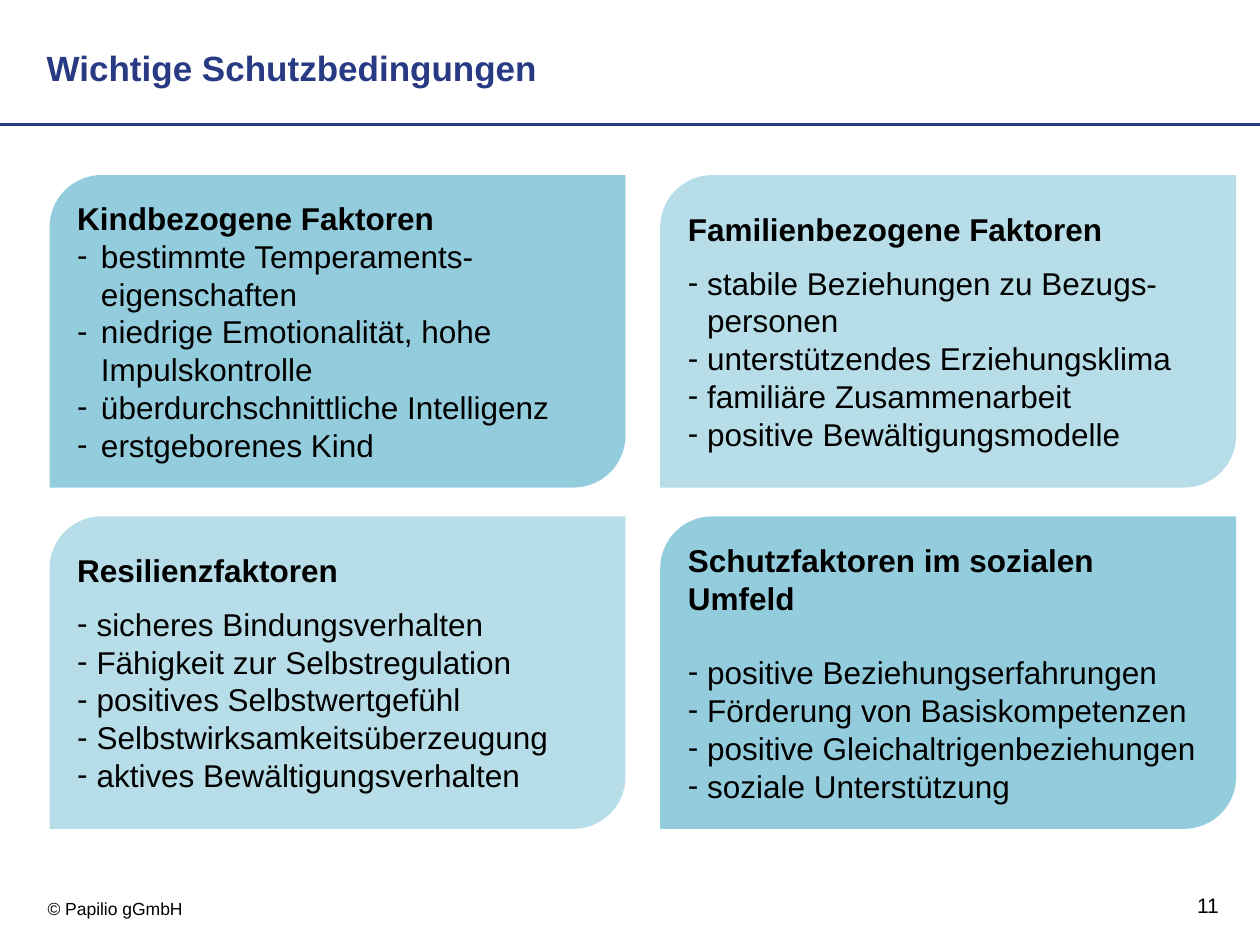
from lxml.etree import SubElement
from pptx import Presentation
from pptx.dml.color import RGBColor
from pptx.enum.shapes import MSO_CONNECTOR, MSO_SHAPE
from pptx.enum.text import MSO_ANCHOR, PP_ALIGN
from pptx.oxml.ns import qn
from pptx.util import Cm, Pt

NAVY = "283A84"
BLACK = "000000"
MID_BLUE = "93CDDD"
PALE_BLUE = "B7DEE8"

COLUMNS = (1.0, 13.31)
ROWS = (3.53, 10.41)
CARD_WIDTH, CARD_HEIGHT = 11.61, 6.3

FACTORS = [
    ("Kindbezogene Faktoren", 0, 0.48, [
        "bestimmte Temperaments-eigenschaften",
        "niedrige Emotionalität, hohe Impulskontrolle",
        "überdurchschnittliche Intelligenz",
        "erstgeborenes Kind",
    ]),
    ("Familienbezogene Faktoren", 9, 0.39, [
        "stabile Beziehungen zu Bezugs-personen",
        "unterstützendes Erziehungsklima",
        "familiäre Zusammenarbeit",
        "positive Bewältigungsmodelle",
    ]),
    ("Resilienzfaktoren", 9, 0.39, [
        "sicheres Bindungsverhalten",
        "Fähigkeit zur Selbstregulation",
        "positives Selbstwertgefühl",
        "Selbstwirksamkeitsüberzeugung",
        "aktives Bewältigungsverhalten",
    ]),
    ("Schutzfaktoren im sozialen Umfeld", 21, 0.39, [
        "positive Beziehungserfahrungen",
        "Förderung von Basiskompetenzen",
        "positive Gleichaltrigenbeziehungen",
        "soziale Unterstützung",
    ]),
]


def color(hex_value):
    return RGBColor.from_string(hex_value)


def add_run(paragraph, text, size, hex_value=BLACK, bold=False):
    run = paragraph.add_run()
    run.text = text
    run.font.name = "Arial"
    run.font.size = Pt(size)
    run.font.bold = bold
    run.font.color.rgb = color(hex_value)


def add_label(slide, box, text, size, hex_value=BLACK, bold=False,
              align=PP_ALIGN.LEFT):
    frame = slide.shapes.add_textbox(*map(Cm, box)).text_frame
    frame.word_wrap = True
    frame.vertical_anchor = MSO_ANCHOR.MIDDLE
    paragraph = frame.paragraphs[0]
    paragraph.alignment = align
    add_run(paragraph, text, size, hex_value, bold)


def add_rule(slide, y, width):
    rule = slide.shapes.add_connector(
        MSO_CONNECTOR.STRAIGHT, Cm(0), Cm(y), Cm(width), Cm(y))
    rule.line.color.rgb = color(NAVY)
    rule.line.width = Pt(1.5)
    SubElement(rule._element.spPr, qn("a:effectLst"))


def add_dash(paragraph, hanging):
    properties = paragraph._p.get_or_add_pPr()
    properties.set("marL", str(Cm(hanging)))
    properties.set("indent", str(-Cm(hanging)))
    SubElement(properties, qn("a:buFont"), typeface="Arial")
    SubElement(properties, qn("a:buChar"), char="-")


def add_card(slide, left, top, fill, heading, gap, hanging, items):
    card = slide.shapes.add_shape(
        MSO_SHAPE.ROUND_2_DIAG_RECTANGLE,
        Cm(left), Cm(top), Cm(CARD_WIDTH), Cm(CARD_HEIGHT))
    card.shadow.inherit = False
    card.fill.solid()
    card.fill.fore_color.rgb = color(fill)
    card.line.fill.background()
    frame = card.text_frame
    frame.word_wrap = True
    frame.vertical_anchor = MSO_ANCHOR.MIDDLE
    title = frame.paragraphs[0]
    title.alignment = PP_ALIGN.LEFT
    add_run(title, heading, 18, bold=True)
    for index, item in enumerate(items):
        paragraph = frame.add_paragraph()
        paragraph.alignment = PP_ALIGN.LEFT
        paragraph.space_before = Pt(0 if index else gap)
        add_dash(paragraph, hanging)
        add_run(paragraph, item, 18)


def main():
    presentation = Presentation()
    presentation.slide_width = Cm(25.4)
    presentation.slide_height = Cm(19.05)
    slide = presentation.slides.add_slide(presentation.slide_layouts[6])

    add_rule(slide, 2.51, 25.4)
    add_label(slide, (0.69, 0.81, 19.43, 1.12),
              "Wichtige Schutzbedingungen", 20, NAVY, bold=True)
    for index, factor in enumerate(FACTORS):
        row, column = divmod(index, 2)
        fill = MID_BLUE if row == column else PALE_BLUE
        add_card(slide, COLUMNS[column], ROWS[row], fill, *factor)
    add_label(slide, (0.71, 17.98, 5.51, 0.69), "© Papilio gGmbH", 10)
    add_label(slide, (18.9, 17.73, 5.92, 1.02), "11", 12,
              align=PP_ALIGN.RIGHT)

    presentation.save("out.pptx")


if __name__ == "__main__":
    main()
